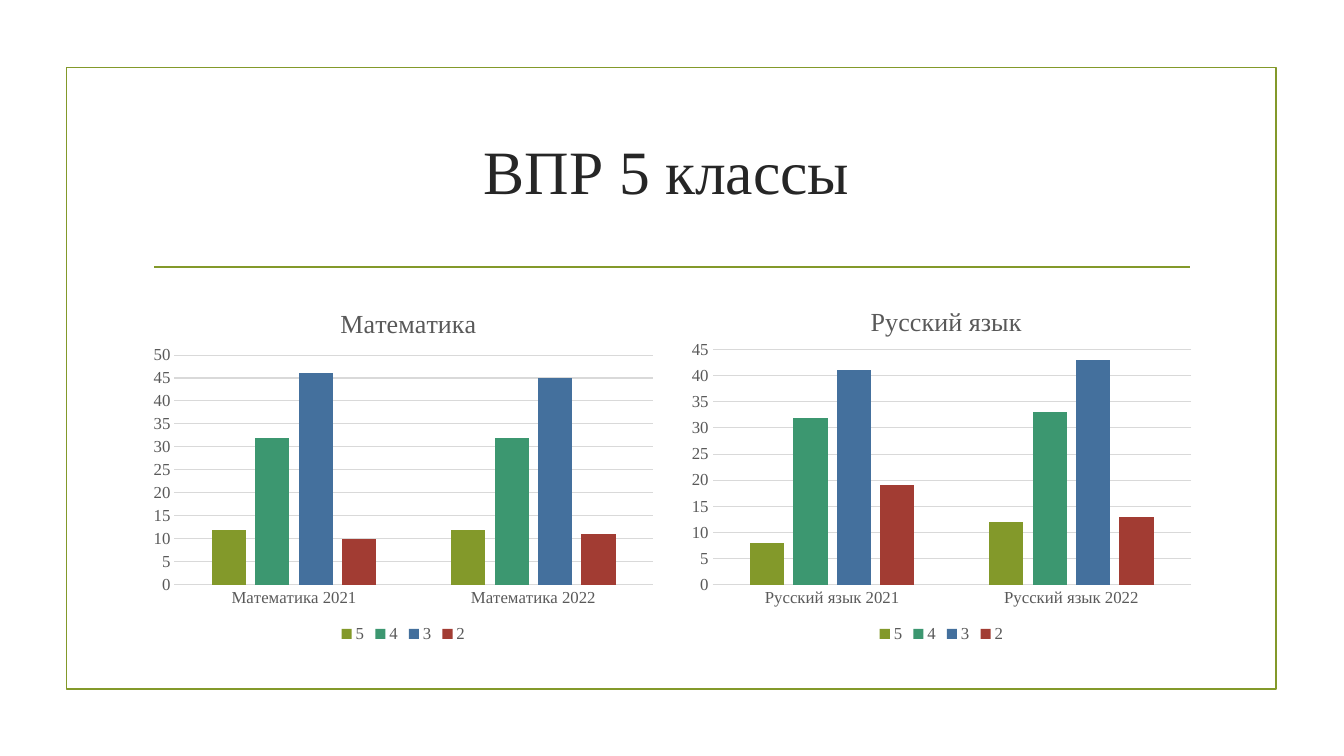
from lxml import etree
from pptx import Presentation
from pptx import chart as charts
from pptx import oxml
from pptx import util as u
from pptx.chart import data as chart_data
from pptx.dml import color
from pptx.enum import chart as chart_enum
from pptx.enum import shapes, text

FONT = "Times New Roman"
OLIVE, DARK, GRAY, PALE = "83992A", "262626", "595959", "D9D9D9"
HEADING = "ВПР 5 классы"
MARKS = [("5", OLIVE), ("4", "3C9770"), ("3", "44709D"), ("2", "A23C33")]
YEARS = (2021, 2022)
SUBJECTS = [
    {
        "name": "Русский язык",
        "column": 1,
        "values": [(8, 12), (32, 33), (41, 43), (19, 13)],
        "maximum": 45,
        "title_layout": {"x": 0.355, "y": 0.05},
        "plot_layout": {"x": 0.06, "y": 0.185, "w": 0.92, "h": 0.645},
    },
    {
        "name": "Математика",
        "column": 0,
        "values": [(12, 12), (32, 32), (46, 45), (10, 11)],
        "maximum": 50,
        "title_layout": {"x": 0.37, "y": 0.055},
        "plot_layout": {"x": 0.06, "y": 0.2, "w": 0.92, "h": 0.63},
    },
]
CHART_LEFT, CHART_TOP = 3.61, 7.11
CHART_WIDTH, CHART_HEIGHT, CHART_GAP = 13.11, 9.19, 0.45


def rgb(value):
    return color.RGBColor.from_string(value)


def apply(target, values):
    for name, value in values.items():
        setattr(target, name, value)


def style_font(font, size, value):
    apply(font, {"name": FONT, "size": u.Pt(size), "bold": False})
    font.color.rgb = rgb(value)


def style_line(line, value, width):
    line.color.rgb = rgb(value)
    line.width = u.Pt(width)


def place(element, positions, inner=False):
    layout = element.find(oxml.ns.qn("c:layout"))
    if layout is None:
        layout = etree.Element(oxml.ns.qn("c:layout"))
        text_part = element.find(oxml.ns.qn("c:tx"))
        if text_part is None:
            element.insert(0, layout)
        else:
            text_part.addnext(layout)
    for child in list(layout):
        layout.remove(child)
    manual = etree.SubElement(layout, oxml.ns.qn("c:manualLayout"))
    settings = {"layoutTarget": "inner"} if inner else {}
    settings.update({"xMode": "edge", "yMode": "edge"})
    settings.update(positions)
    for name, value in settings.items():
        etree.SubElement(manual, oxml.ns.qn("c:" + name)).set("val", str(value))


def add_subject(slide, subject):
    content = chart_data.CategoryChartData()
    content.categories = [f"{subject['name']} {year}" for year in YEARS]
    for (mark, _), values in zip(MARKS, subject["values"]):
        content.add_series(mark, values)
    left = CHART_LEFT + subject["column"] * (CHART_WIDTH + CHART_GAP)
    frame = slide.shapes.add_chart(
        chart_enum.XL_CHART_TYPE.COLUMN_CLUSTERED,
        u.Cm(left), u.Cm(CHART_TOP), u.Cm(CHART_WIDTH), u.Cm(CHART_HEIGHT), content,
    )
    chart = frame.chart
    style_font(chart.font, 10, "000000")

    chart.has_title = True
    paragraph = chart.chart_title.text_frame.paragraphs[0]
    run = paragraph.add_run()
    run.text = subject["name"]
    style_font(run.font, 18.6, GRAY)
    chart.chart_title.include_in_layout = False
    place(chart.chart_title.format and chart.chart_title.element, subject["title_layout"])
    plot_area = chart.element.find(".//" + oxml.ns.qn("c:plotArea"))
    place(plot_area, subject["plot_layout"], inner=True)

    chart.has_legend = True
    apply(chart.legend, {
        "position": chart_enum.XL_LEGEND_POSITION.BOTTOM,
        "include_in_layout": False,
    })
    style_font(chart.legend.font, 12, GRAY)

    plot = chart.plots[0]
    apply(plot, {"gap_width": 219, "overlap": -27, "vary_by_categories": False})
    for series, (_, fill) in zip(plot.series, MARKS):
        series.format.fill.solid()
        series.format.fill.fore_color.rgb = rgb(fill)

    for axis in (chart.category_axis, chart.value_axis):
        apply(axis, {
            "major_tick_mark": chart_enum.XL_TICK_MARK.NONE,
            "minor_tick_mark": chart_enum.XL_TICK_MARK.NONE,
        })
        style_font(axis.tick_labels.font, 12, GRAY)
    style_line(chart.category_axis.format.line, PALE, 0.75)
    apply(chart.value_axis, {
        "minimum_scale": 0,
        "maximum_scale": subject["maximum"],
        "major_unit": 5,
        "has_major_gridlines": True,
    })
    chart.value_axis.format.line.fill.background()
    style_line(chart.value_axis.major_gridlines.format.line, PALE, 0.75)


def main():
    presentation = Presentation()
    apply(presentation, {"slide_width": u.Cm(33.87), "slide_height": u.Cm(19.05)})
    slide = presentation.slides.add_slide(presentation.slide_layouts[6])

    border = slide.shapes.add_shape(
        shapes.MSO_SHAPE.RECTANGLE, u.Cm(1.68), u.Cm(1.7), u.Cm(30.48), u.Cm(15.67)
    )
    border.shadow.inherit = False
    border.fill.background()
    style_line(border.line, OLIVE, 1.25)

    divider = slide.shapes.add_connector(
        shapes.MSO_CONNECTOR.STRAIGHT, u.Cm(3.89), u.Cm(6.73), u.Cm(30), u.Cm(6.73)
    )
    style_line(divider.line, OLIVE, 1.25)
    etree.SubElement(divider.element.spPr, oxml.ns.qn("a:effectLst"))

    heading = slide.shapes.add_textbox(u.Cm(3.33), u.Cm(2.72), u.Cm(26.95), u.Cm(3.1))
    apply(heading.text_frame, {
        "word_wrap": True,
        "vertical_anchor": text.MSO_ANCHOR.MIDDLE,
    })
    paragraph = heading.text_frame.paragraphs[0]
    apply(paragraph, {"text": HEADING, "alignment": text.PP_ALIGN.CENTER})
    style_font(paragraph.runs[0].font, 44, DARK)

    for subject in SUBJECTS:
        add_subject(slide, subject)
    presentation.save("out.pptx")


if __name__ == "__main__":
    main()
